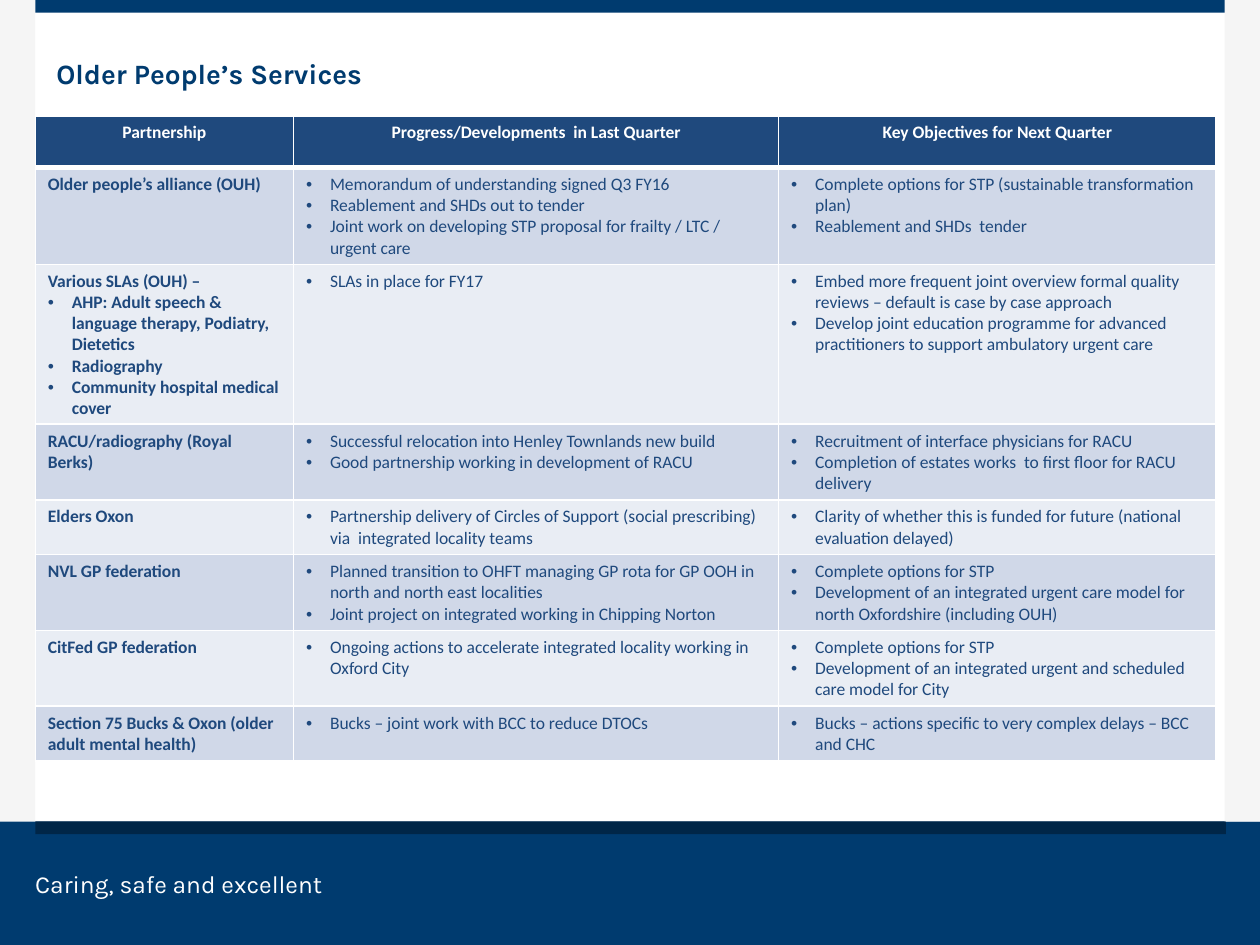
from pptx import Presentation
from pptx.dml.color import RGBColor
from pptx.enum.shapes import MSO_SHAPE
from pptx.enum.text import MSO_ANCHOR, PP_ALIGN
from pptx.oxml.ns import qn
from pptx.util import Inches, Pt
from lxml.etree import SubElement

COLORS = {
    "navy": "003B6F", "shade": "002648", "side": "F5F5F5", "white": "FFFFFF",
    "head": "1F497D", "odd": "D0D8E8", "even": "E9EDF4",
}

HEADER = ["Partnership", "Progress/Developments  in Last Quarter",
          "Key Objectives for Next Quarter"]

# Each row: partnership lines, progress bullets, objective bullets
ROWS = [
    (["Older people’s alliance (OUH)"],
     ["Memorandum of understanding signed Q3 FY16",
      "Reablement and SHDs out to tender",
      "Joint work on developing STP proposal for frailty / LTC / urgent care"],
     ["Complete options for STP (sustainable transformation plan)",
      "Reablement and SHDs  tender"]),
    (["Various SLAs (OUH) –",
      "AHP: Adult speech & language therapy, Podiatry, Dietetics",
      "Radiography",
      "Community hospital medical cover"],
     ["SLAs in place for FY17"],
     ["Embed more frequent joint overview formal quality reviews – default is case by case approach",
      "Develop joint education programme for advanced practitioners to support ambulatory urgent care"]),
    (["RACU/radiography (Royal Berks)"],
     ["Successful relocation into Henley Townlands new build",
      "Good partnership working in development of RACU"],
     ["Recruitment of interface physicians for RACU",
      "Completion of estates works  to first floor for RACU delivery"]),
    (["Elders Oxon"],
     ["Partnership delivery of Circles of Support (social prescribing) via  integrated locality teams"],
     ["Clarity of whether this is funded for future (national evaluation delayed)"]),
    (["NVL GP federation"],
     ["Planned transition to OHFT managing GP rota for GP OOH in north and north east localities",
      "Joint project on integrated working in Chipping Norton"],
     ["Complete options for STP",
      "Development of an integrated urgent care model for north Oxfordshire (including OUH)"]),
    (["CitFed GP federation"],
     ["Ongoing actions to accelerate integrated locality working in Oxford City"],
     ["Complete options for STP",
      "Development of an integrated urgent and scheduled care model for City"]),
    (["Section 75 Bucks & Oxon (older adult mental health)"],
     ["Bucks – joint work with BCC to reduce DTOCs"],
     ["Bucks – actions specific to very complex delays – BCC and CHC"]),
]


class SlideBuilder:
    def __init__(self, slide):
        self.s = slide

    def color(self, name):
        return RGBColor.from_string(COLORS[name])

    def font(self, font, color, **fmt):
        for key, value in fmt.items():
            setattr(font, key, value)
        font.color.rgb = self.color(color)

    def rect(self, x, y, w, h, color):
        sp = self.s.shapes.add_shape(MSO_SHAPE.RECTANGLE, Inches(x), Inches(y), Inches(w), Inches(h))
        sp.shadow.inherit = False
        sp.fill.solid()
        sp.fill.fore_color.rgb = self.color(color)
        sp.line.fill.background()

    def text(self, x, y, w, h, text, color, frame, **fmt):
        tf = self.s.shapes.add_textbox(Inches(x), Inches(y), Inches(w), Inches(h)).text_frame
        for key, value in frame.items():
            setattr(tf, key, value)
        r = tf.paragraphs[0].add_run()
        r.text = text
        self.font(r.font, color, **fmt)

    def bullet(self, p):
        pPr = p._p.get_or_add_pPr()
        pPr.set("marL", str(Inches(0.19)))
        pPr.set("indent", str(-Inches(0.19)))
        SubElement(pPr, qn("a:buFont"), typeface="Arial")
        SubElement(pPr, qn("a:buChar"), char="•")

    def borders(self, cell, widths):
        tcPr = cell._tc.get_or_add_tcPr()
        for side, width in zip("LRTB", widths):
            ln = SubElement(tcPr, qn(f"a:ln{side}"), w=str(Pt(width)))
            fill = SubElement(ln, qn("a:solidFill"))
            SubElement(fill, qn("a:srgbClr"), val=COLORS["white"])

    def cell(self, cell, lines, row, col):
        header = row == 0
        self.borders(cell, (1, 1, 3 if row == 1 else 1, 3 if header else 1))
        cell.fill.solid()
        cell.fill.fore_color.rgb = self.color("head" if header else "odd" if row % 2 else "even")
        tf = cell.text_frame
        for i, line in enumerate(lines):
            p = tf.add_paragraph() if i else tf.paragraphs[0]
            if header:
                p.alignment = PP_ALIGN.CENTER
            elif col or i:
                self.bullet(p)
            r = p.add_run()
            r.text = line
            self.font(r.font, "white" if header else "head",
                      name="Calibri", size=Pt(10), bold=header or col == 0)

    def table(self, x, y, widths, row_height, rows):
        table = self.s.shapes.add_table(len(rows), len(widths), Inches(x), Inches(y),
                                        Inches(sum(widths)), Inches(row_height * len(rows))).table
        for column, width in zip(table.columns, widths):
            column.width = Inches(width)
        for i, row in enumerate(rows):
            table.rows[i].height = Inches(row_height)
            for j, lines in enumerate(row):
                self.cell(table.cell(i, j), lines, i, j)


def main():
    prs = Presentation()
    prs.slide_width, prs.slide_height = Inches(10), Inches(7.5)
    b = SlideBuilder(prs.slides.add_slide(prs.slide_layouts[6]))

    # Frame and footer bands
    b.rect(0, 0, 0.28, 6.52, "side")
    b.rect(0, 6.52, 10, 0.98, "navy")
    b.rect(0.28, 6.52, 9.45, 0.1, "shade")
    b.rect(0.28, 0, 9.45, 0.1, "navy")
    b.rect(9.72, 0, 0.28, 6.52, "side")

    # Strapline and title
    flush = dict.fromkeys(("margin_left", "margin_top", "margin_right", "margin_bottom"), 0)
    b.text(0.28, 6.9, 3.07, 0.24, "Caring, safe and excellent", "white",
           flush, name="Karla", size=Pt(14))
    b.text(0.35, 0.25, 9, 0.67, "Older People’s Services", "navy",
           {"word_wrap": True, "vertical_anchor": MSO_ANCHOR.MIDDLE},
           name="Karla", size=Pt(16), bold=True)

    # Partnership table
    b.table(0.28, 0.92, [2.05, 3.85, 3.47], 0.41, [[[h] for h in HEADER], *ROWS])

    prs.save("out.pptx")


if __name__ == "__main__":
    main()
